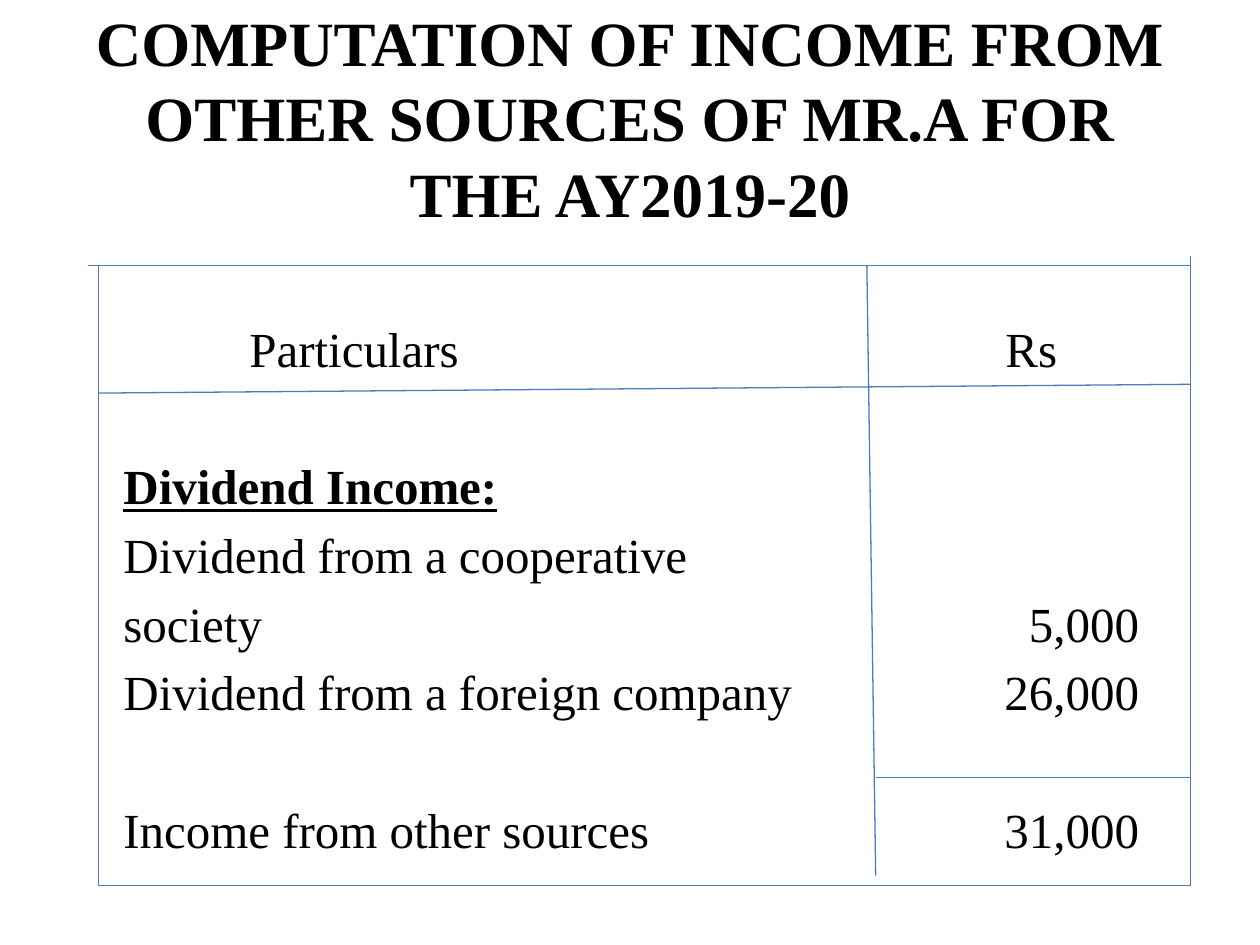
from lxml import etree
from pptx import Presentation
from pptx.dml.color import RGBColor
from pptx.enum import shapes, text
from pptx.oxml.ns import qn
from pptx.util import Inches, Pt

BLACK = RGBColor(0, 0, 0)
BLUE = RGBColor(0x4B, 0x7E, 0xBC)
FONT = "Times New Roman"
TITLE = "COMPUTATION OF INCOME FROM OTHER SOURCES OF MR.A FOR THE AY2019-20"
LEFT, RIGHT, TOP, BOTTOM = 0.78, 9.45, 2.11, 7.03
SPLIT = 6.95
PITCH = 39.2
SPACE = 5.6
HEAD_TABS = [(1, "l"), (7, "l")]
SUM_TABS = [(8.06, "r")]
ROWS = [
    ("\tParticulars\tRs", HEAD_TABS, 0),
    ("Dividend Income:", [], 1),
    ("Dividend from a cooperative", [], 0),
    ("society\t5,000", SUM_TABS, 0),
    ("Dividend from a foreign company\t26,000", SUM_TABS, 0),
    ("Income from other sources\t31,000", SUM_TABS, 1),
]
RULES = [
    (0.7, TOP, RIGHT, TOP),
    (LEFT, 3.12, RIGHT, 3.05),
    (6.88, TOP, SPLIT, 6.95),
    (SPLIT, 6.17, RIGHT, 6.17),
    (LEFT, TOP, LEFT, BOTTOM),
    (RIGHT, 2.03, RIGHT, BOTTOM),
    (LEFT, BOTTOM, RIGHT, BOTTOM),
]


def add_box(slide, *place):
    """Add a wrapping text box and return its text frame."""
    frame = slide.shapes.add_textbox(*map(Inches, place)).text_frame
    frame.word_wrap = True
    return frame


def set_font(para, size, bold=False):
    """Format the runs of a paragraph."""
    for run in para.runs:
        font = run.font
        font.name, font.size, font.bold = FONT, Pt(size), bold
        font.color.rgb = BLACK


def set_tabs(para, tabs):
    """Give a paragraph its tab stops."""
    if tabs:
        stops = etree.SubElement(para._p.get_or_add_pPr(), qn("a:tabLst"))
        for pos, side in tabs:
            etree.SubElement(stops, qn("a:tab"), pos=str(Inches(pos)), algn=side)


def add_title(slide):
    """Add the centred heading."""
    frame = add_box(slide, 0.5, 0.3, 9, 1.25)
    frame.vertical_anchor = text.MSO_ANCHOR.MIDDLE
    para = frame.paragraphs[0]
    para.text = TITLE
    para.alignment = text.PP_ALIGN.CENTER
    set_font(para, 36, True)


def add_rows(slide):
    """Add the statement lines with tabbed amounts."""
    frame = add_box(slide, 0.5, 1.75, 9.19, 5.52)
    frame.margin_left, frame.margin_top = Inches(0.48), Inches(0.78)
    for num, (line, tabs, skip) in enumerate(ROWS):
        para = frame.add_paragraph() if num else frame.paragraphs[0]
        para.text = line
        set_tabs(para, tabs)
        if num:
            para.space_before = Pt(SPACE + skip * PITCH)
        set_font(para, 28, line.endswith(":"))
        para.runs[0].font.underline = line.endswith(":")


def add_rule(slide, *ends):
    """Add a thin blue line."""
    rule = slide.shapes.add_connector(
        shapes.MSO_CONNECTOR.STRAIGHT, *map(Inches, ends))
    rule.line.color.rgb = BLUE
    rule.line.width = Pt(0.75)
    etree.SubElement(rule._element.spPr, qn("a:effectLst"))


def main():
    """Build and save the slide."""
    deck = Presentation()
    deck.slide_width, deck.slide_height = Inches(10), Inches(7.5)
    slide = deck.slides.add_slide(deck.slide_layouts[6])
    add_title(slide)
    add_rows(slide)
    for ends in RULES:
        add_rule(slide, *ends)
    deck.save("out.pptx")


if __name__ == "__main__":
    main()
